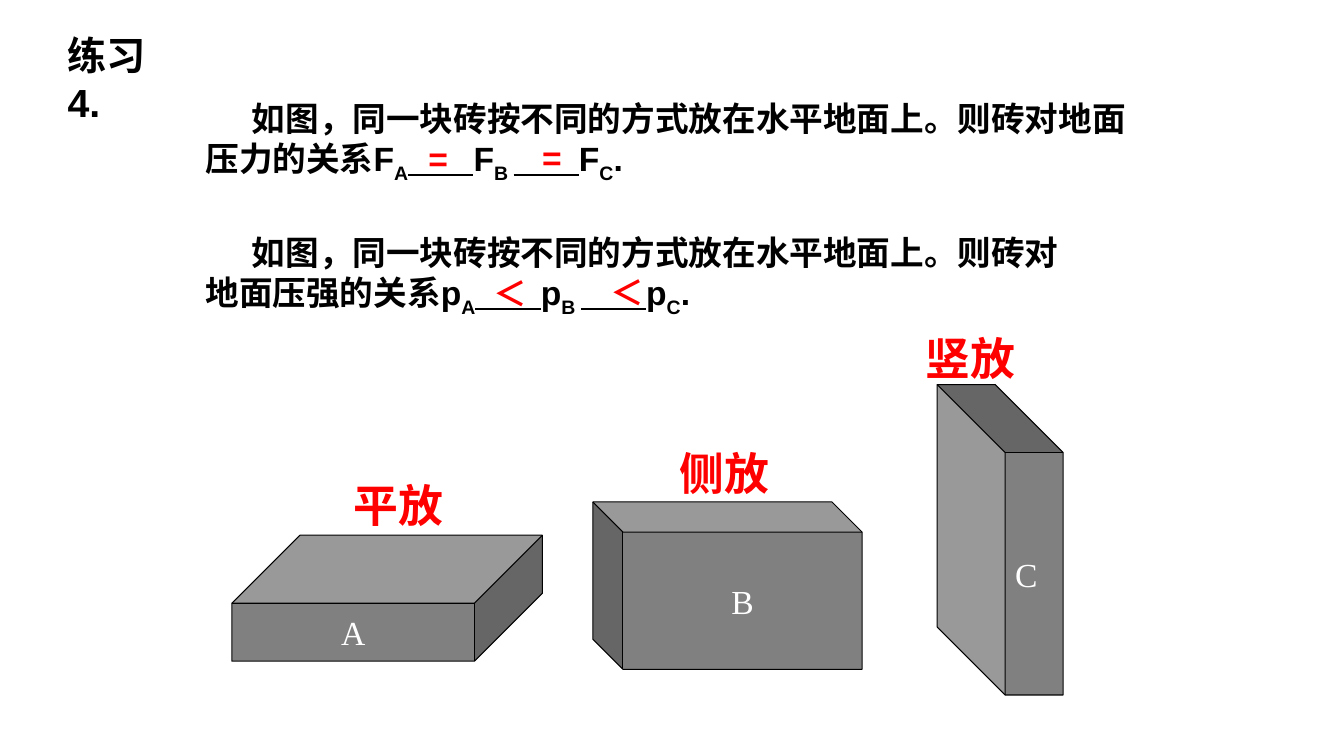
from pptx import Presentation
from pptx import util as u
from pptx.dml import color
from pptx.enum import shapes, text

COLUMNS, ROWS = 133.3, 75


def paint(target, value):
    target.rgb = color.RGBColor.from_string(value)


class Board:
    sans, serif = "Arial", "Times New Roman"
    ink, answer_red, brick_grey, white = "000000", "FF0000", "808080", "FFFFFF"

    def __init__(self, deck):
        self.deck = deck
        self.slide = deck.slides.add_slide(deck.slide_layouts[5])

    def place(self, left, top, width, height):
        column = self.deck.slide_width / COLUMNS
        row = self.deck.slide_height / ROWS
        return [u.Emu(round(n)) for n in
                (left * column, top * row, width * column, height * row)]

    def run(self, paragraph, words, size, face, ink, bold=True):
        piece = paragraph.add_run()
        piece.text = words
        piece.font.size = u.Pt(size)
        piece.font.name = face
        piece.font.bold = bold
        paint(piece.font.fill.fore_color if piece.font.fill.solid() else piece.font.color, ink)
        return piece

    def heading(self, words, *area):
        title = self.slide.shapes.title
        title.left, title.top, title.width, title.height = self.place(*area)
        frame = title.text_frame
        frame.word_wrap = True
        frame.auto_size = text.MSO_AUTO_SIZE.NONE
        frame.vertical_anchor = text.MSO_ANCHOR.TOP
        frame.margin_right = u.Inches(0.4)
        line = frame.paragraphs[0]
        line.alignment = text.PP_ALIGN.LEFT
        line.line_spacing = 1.0
        line.space_before = u.Pt(0)
        self.run(line, words, 28, self.sans, self.ink)

    def box(self, area, wrap=True):
        frame = self.slide.shapes.add_textbox(*self.place(*area)).text_frame
        frame.word_wrap = wrap
        return frame.paragraphs[0]

    def question(self, area, stem, quantity):
        line = self.box(area)
        line._p.get_or_add_pPr().set("indent", str(u.Inches(0.46)))
        self.run(line, stem, 24, self.sans, self.ink)
        for subscript, tail in (("A", " " * 7), ("B ", " " * 7), ("C", ".")):
            self.run(line, quantity, 24, self.sans, self.ink)
            index = self.run(line, subscript, 24, self.sans, self.ink)
            index.font._element.set("baseline", "-25000")
            blank = self.run(line, tail, 24, self.sans, self.ink)
            blank.font.underline = tail.isspace()

    def answer(self, sign, left, top):
        line = self.box((left, top, 5.5, 5))
        line.alignment = text.PP_ALIGN.CENTER
        self.run(line, sign, 24, self.sans, self.answer_red)

    def caption(self, words, left, top):
        line = self.box((left, top, 10.9, 6.4), wrap=False)
        self.run(line, words, 32, self.serif, self.answer_red)

    def brick(self, letter, area, depth, turn=0, flipped=False, vertical=False):
        block = self.slide.shapes.add_shape(shapes.MSO_SHAPE.CUBE, *self.place(*area))
        block.adjustments[0] = depth
        block.rotation = turn
        block.shadow.inherit = False
        block.fill.solid()
        paint(block.fill.fore_color, self.brick_grey)
        block.line.width = u.Pt(0.75)
        paint(block.line.color, self.ink)
        if flipped:
            block._element.spPr.xfrm.set("flipV", "1")
        frame = block.text_frame
        frame.word_wrap = False
        frame.vertical_anchor = text.MSO_ANCHOR.MIDDLE
        if vertical:
            frame._txBody.bodyPr.set("vert", "eaVert")
        line = frame.paragraphs[0]
        line.alignment = text.PP_ALIGN.CENTER
        self.run(line, letter, 24, self.serif, self.white, bold=False)


def main():
    deck = Presentation()
    deck.slide_width, deck.slide_height = u.Inches(13.33), u.Inches(7.5)
    board = Board(deck)
    board.heading("练习4.", 5.7, 2.6, 13.3, 10.5)

    board.brick("A", (23, 53.1, 30.8, 12.5), 0.54)
    board.brick("C", (83.8, 47.3, 30.8, 12.5), 0.54, turn=270, vertical=True)
    board.brick("B", (58.8, 49.8, 26.7, 16.6), 0.18, turn=180, flipped=True)

    setting = "如图，同一块砖按不同的方式放在水平地面上。则砖对地面"
    board.question((19.4, 9.2, 94.8, 9.1), setting + "压力的关系", "F")
    board.question((19.4, 22.5, 89.2, 9.1), setting + "压强的关系", "p")

    for sign, left, top in (("=", 40.7, 13.2), ("=", 52, 13.1),
                            ("＜", 47.9, 26.6), ("＜", 59.5, 26.5)):
        board.answer(sign, left, top)
    for pose, left, top in (("平放", 34.1, 46.9), ("侧放", 66.4, 43.7),
                            ("竖放", 90.8, 32.3)):
        board.caption(pose, left, top)
    deck.save("out.pptx")


if __name__ == "__main__":
    main()
